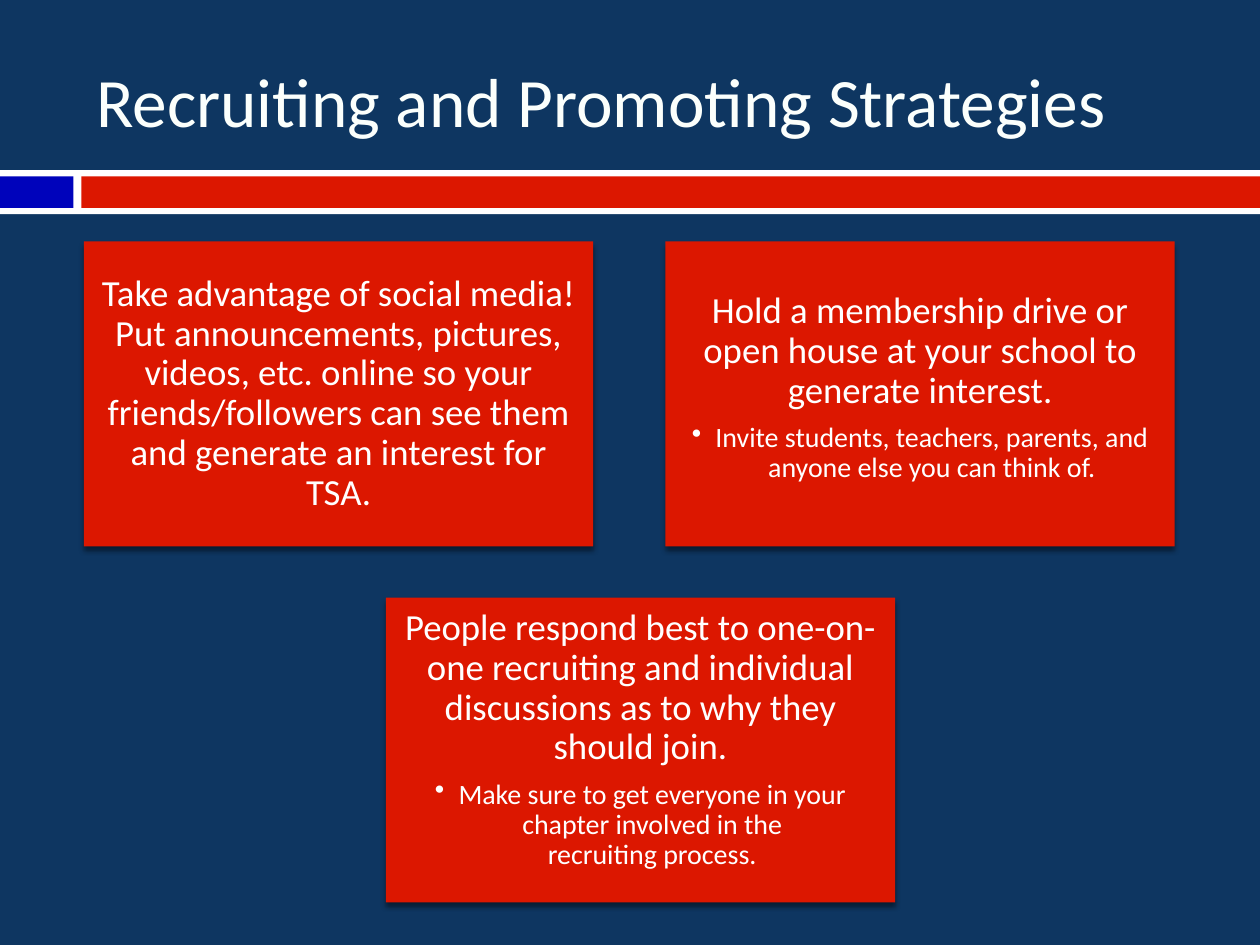
from lxml.etree import SubElement
from pptx import Presentation
from pptx.dml.color import RGBColor
from pptx.enum.shapes import MSO_SHAPE
from pptx.enum.text import MSO_ANCHOR, PP_ALIGN
from pptx.oxml.ns import qn
from pptx.util import Pt


def color(hex_code):
    """Turn a hex string into a colour."""
    return RGBColor.from_string(hex_code)


class Deck:
    """Hold the style and the current slide."""

    font = "Calibri"
    navy, blue, red = "0E3661", "0003BB", "DC1700"
    white, title_white = "FFFFFF", "FBFFFC"
    card_width, card_height = 291, 174.2

    def __init__(self, width, height):
        """Start a presentation with one blank slide."""
        self.deck = Presentation()
        self.deck.slide_width, self.deck.slide_height = Pt(width), Pt(height)
        self.slide = self.deck.slides.add_slide(self.deck.slide_layouts[6])
        self.slide.background.fill.solid()
        self.slide.background.fill.fore_color.rgb = color(self.navy)

    def bar(self, left, top, width, height, fill):
        """Draw a plain filled rectangle."""
        bar = self.slide.shapes.add_shape(
            MSO_SHAPE.RECTANGLE, Pt(left), Pt(top), Pt(width), Pt(height))
        bar.shadow.inherit = False
        bar.fill.solid()
        bar.fill.fore_color.rgb = color(fill)
        bar.line.fill.background()
        return bar

    def add_words(self, paragraph, text, size, ink):
        """Add the lines of a text as runs."""
        for number, line in enumerate(text.split("\n")):
            if number:
                paragraph.add_line_break()
            run = paragraph.add_run()
            run.text = line
            run.font.name, run.font.size = self.font, Pt(size)
            run.font.color.rgb = color(ink)

    def title(self, text, left, top, width, height):
        """Place the slide title."""
        heading = self.slide.shapes.add_textbox(
            Pt(left), Pt(top), Pt(width), Pt(height)).text_frame
        heading.word_wrap = True
        heading.vertical_anchor = MSO_ANCHOR.MIDDLE
        self.add_words(heading.paragraphs[0], text, 39.6, self.title_white)

    def soft_shadow(self, card):
        """Give a card a soft shadow below it."""
        effects = card.element.spPr.find(qn("a:effectLst"))
        shadow = SubElement(effects, qn("a:outerShdw"), blurRad=str(Pt(3)),
                            dist=str(Pt(2.4)), dir="5400000", rotWithShape="0")
        black = SubElement(shadow, qn("a:srgbClr"), val="000000")
        SubElement(black, qn("a:alpha"), val="45000")

    def bullet(self, paragraph, indent):
        """Turn a paragraph into a bullet with a hanging indent."""
        properties = paragraph._p.get_or_add_pPr()
        properties.set("marL", str(Pt(indent)))
        properties.set("indent", str(-Pt(indent)))
        SubElement(properties, qn("a:buChar"), char="•")

    def card(self, left, top, strategy, detail=None,
             anchor=MSO_ANCHOR.TOP, inset=6.5, top_inset=6.5):
        """Place a strategy card with an optional detail bullet."""
        card = self.bar(left, top, self.card_width, self.card_height, self.red)
        self.soft_shadow(card)
        body = card.text_frame
        body.word_wrap = True
        body.vertical_anchor = anchor
        body.margin_left = body.margin_right = body.margin_bottom = Pt(inset)
        body.margin_top = Pt(top_inset)
        lead = body.paragraphs[0]
        lead.alignment, lead.line_spacing = PP_ALIGN.CENTER, 0.9
        self.add_words(lead, strategy, 21, self.white)
        if detail:
            lead.space_after = Pt(7)
            point = body.add_paragraph()
            point.alignment, point.line_spacing = PP_ALIGN.CENTER, 0.9
            self.bullet(point, 13.5)
            self.add_words(point, detail, 16, self.white)


def main():
    """Build the slide and save it."""
    deck = Deck(720, 540)
    deck.bar(0, 97.2, 720, 25.2, deck.white)
    deck.bar(0, 100.8, 42, 18, deck.blue)
    deck.bar(46.5, 100.8, 673.5, 18, deck.red)
    deck.title("Recruiting and Promoting Strategies", 48, 18, 642, 78)

    upper, lower = 138, 341.5
    deck.card(48, upper,
              "Take advantage of social media! Put announcements, pictures, "
              "videos, etc. online so your friends/followers can see them "
              "and generate an interest for TSA.", anchor=MSO_ANCHOR.MIDDLE)
    deck.card(380.3, upper,
              "Hold a membership drive or open house at your school to "
              "generate interest.",
              "Invite students, teachers, parents, and anyone else you can "
              "think of.", inset=5, top_inset=29)
    deck.card(220.5, lower,
              "People respond best to one-on-one recruiting and individual "
              "discussions as to why they should join.",
              "Make sure to get everyone in your chapter involved in the\n"
              "recruiting process.")
    deck.deck.save("out.pptx")


if __name__ == "__main__":
    main()
